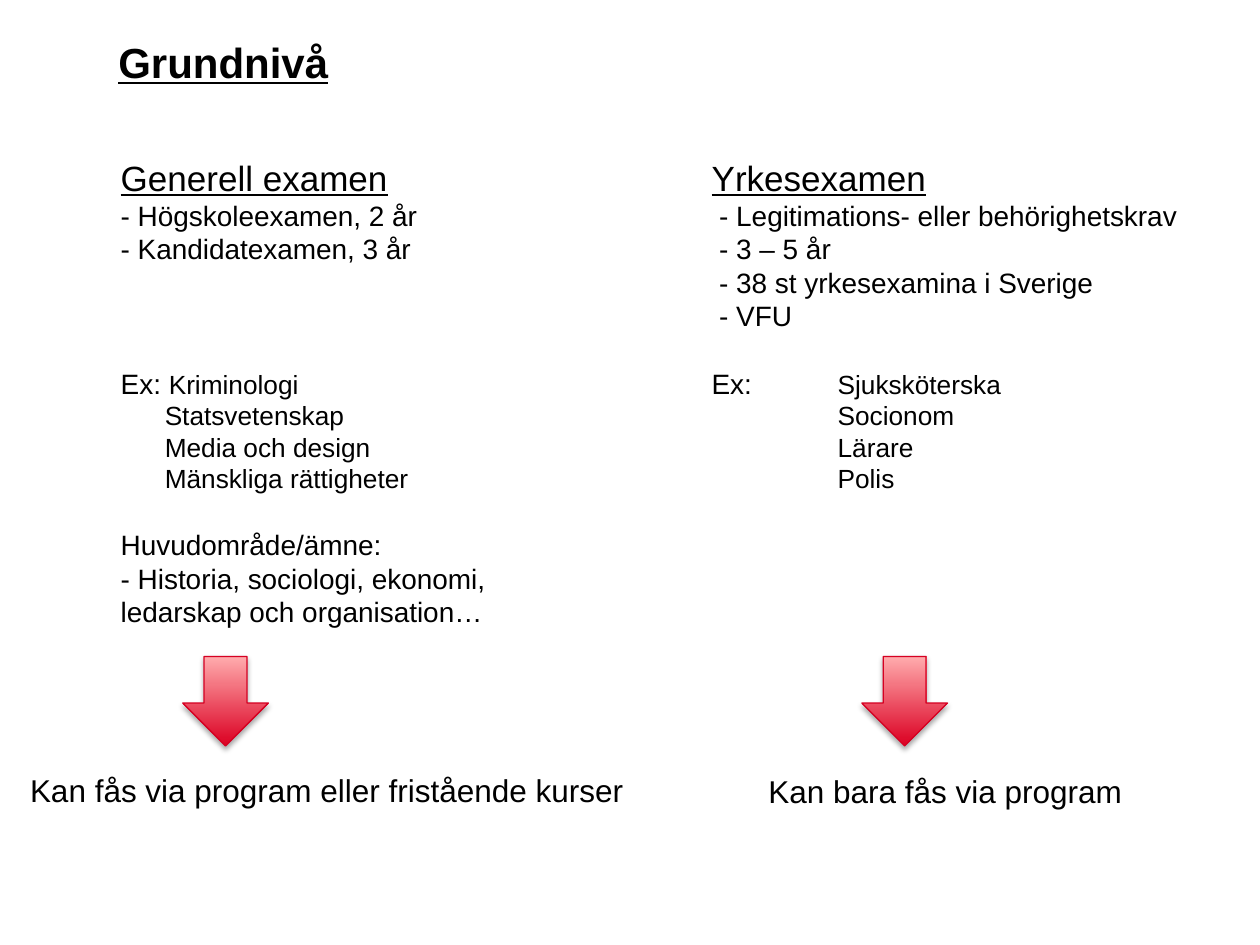
from lxml import etree
from pptx import Presentation
from pptx.dml.color import RGBColor
from pptx.enum.shapes import MSO_SHAPE
from pptx.enum.text import MSO_ANCHOR
from pptx.oxml.ns import qn
from pptx.util import Inches, Pt

COLORS = {"text": "000000", "dark": "DB0022", "light": "FFABAD",
          "outline": "D60022", "shadow": "000000"}
LINE_FACTOR = 1.2

prs = Presentation()
prs.slide_width, prs.slide_height = Inches(10), Inches(7.5)
s = prs.slides.add_slide(prs.slide_layouts[6])


def add_text(box, lines, anchor=MSO_ANCHOR.TOP):
    """Each line is (runs, options); a run is (text, size in points)."""
    tf = s.shapes.add_textbox(*map(Inches, box)).text_frame
    tf.word_wrap = False
    tf.vertical_anchor = anchor
    for i, (runs, opts) in enumerate(lines):
        p = tf.paragraphs[0] if i == 0 else tf.add_paragraph()
        p.line_spacing = Pt(LINE_FACTOR * max(size for _, size in runs))
        p.space_before = Pt(opts.get("before", 0))
        pPr = p._p.get_or_add_pPr()
        pPr.set("marL", str(Inches(opts.get("left", 0))))
        pPr.set("indent", str(Inches(opts.get("indent", 0))))
        for text, size in runs:
            r = p.add_run()
            r.text = text
            r.font.name = "Arial"
            r.font.size = Pt(size)
            r.font.bold = opts.get("bold", False)
            r.font.underline = opts.get("underline", False)
            r.font.color.rgb = RGBColor.from_string(COLORS["text"])


HEADING = {"underline": True}
BULLET = {"left": 0.06}
SUBJECT = {"left": 0.35}
PROFESSION = {"left": 1}

add_text((5.55, 1.19, 3.94, 3.4), [
    ([("Yrkesexamen", 20)], HEADING),
    ([("- Legitimations- eller behörighetskrav", 16)], BULLET),
    ([("- 3 – 5 år", 16)], BULLET),
    ([("- 38 st yrkesexamina i Sverige", 16)], BULLET),
    ([("- VFU", 16)], BULLET),
    ([("Ex:\t", 16), ("Sjuksköterska", 15)],
     {"left": 1, "indent": -1, "before": 19.2}),
    ([("Socionom", 15)], PROFESSION),
    ([("Lärare", 15)], PROFESSION),
    ([("Polis", 15)], PROFESSION),
])

add_text((0.86, 1.19, 3.13, 5.44), [
    ([("Generell examen", 20)], HEADING),
    ([("- Högskoleexamen, 2 år", 16)], {}),
    ([("- Kandidatexamen, 3 år", 16)], {}),
    ([("Ex: ", 16), ("Kriminologi", 15)], {"before": 57.6}),
    ([("Statsvetenskap", 15)], SUBJECT),
    ([("Media och design", 15)], SUBJECT),
    ([("Mänskliga rättigheter", 15)], SUBJECT),
    ([("Huvudområde/ämne:", 16)], {"before": 19.2}),
    ([("- Historia, sociologi, ekonomi,", 16)], {}),
    ([("ledarskap och organisation…", 16)], {}),
])

for left in (6.84, 1.45):
    sp = s.shapes.add_shape(MSO_SHAPE.DOWN_ARROW, Inches(left), Inches(5.21),
                            Inches(0.68), Inches(0.71))
    sp.fill.gradient()
    sp.fill.gradient_angle = 90
    for stop, name, position in zip(sp.fill.gradient_stops, ("dark", "light"), (0, 1)):
        stop.color.rgb = RGBColor.from_string(COLORS[name])
        stop.position = position
    sp.line.color.rgb = RGBColor.from_string(COLORS["outline"])
    sp.line.width = Pt(0.75)
    sp.shadow.inherit = False
    effects = sp._element.spPr.find(qn("a:effectLst"))
    shadow = etree.SubElement(effects, qn("a:outerShdw"), blurRad=str(Pt(3.1)),
                              dist=str(Pt(1.8)), dir="5400000", rotWithShape="0")
    color = etree.SubElement(shadow, qn("a:srgbClr"), val=COLORS["shadow"])
    etree.SubElement(color, qn("a:alpha"), val="35000")

add_text((6, 6.08, 3.03, 0.4), [([("Kan bara fås via program", 18)], {})])
add_text((0.14, 6.07, 4.96, 0.71),
         [([("Kan fås via program eller fristående kurser", 18)], {})])
add_text((0.84, 0.09, 7.09, 0.8),
         [([("Grundnivå", 24)], {"bold": True, "underline": True})],
         MSO_ANCHOR.MIDDLE)

prs.save("out.pptx")
